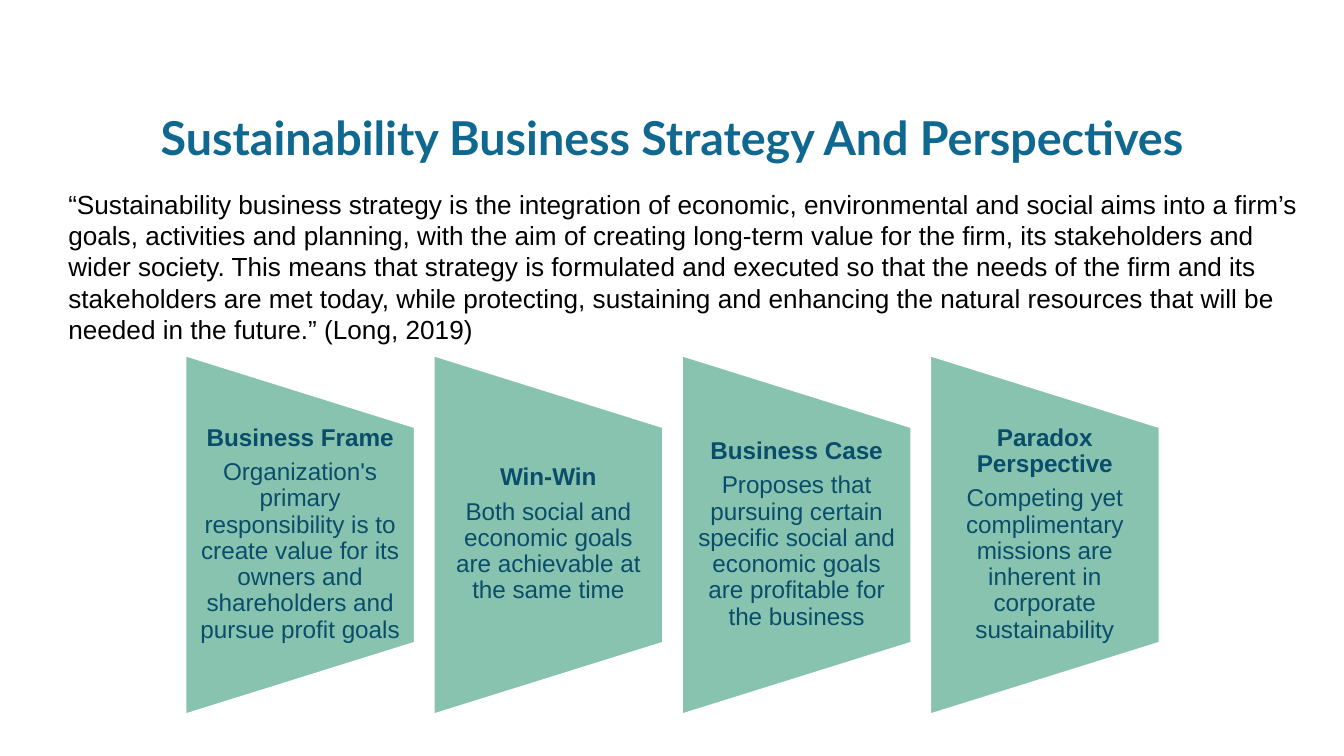
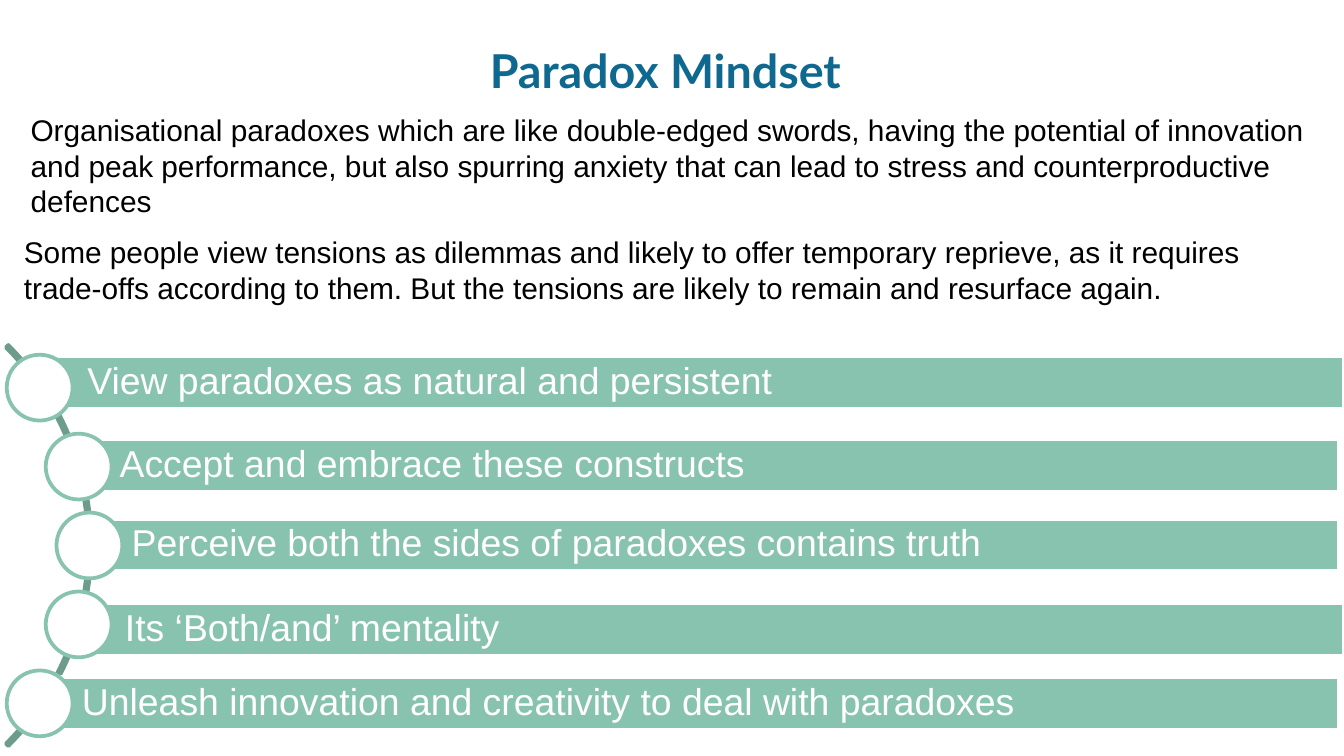
from dataclasses import dataclass
from typing import Optional

from pptx import Presentation
from pptx.dml.color import RGBColor
from pptx.enum.shapes import MSO_SHAPE
from pptx.enum.text import MSO_ANCHOR, MSO_AUTO_SIZE, PP_ALIGN
from pptx.util import Inches, Pt

RECT = MSO_SHAPE.RECTANGLE
OVAL = MSO_SHAPE.OVAL
ARC = MSO_SHAPE.BLOCK_ARC
FUNNEL = MSO_SHAPE.FLOWCHART_MANUAL_OPERATION
MIDDLE = MSO_ANCHOR.MIDDLE
TOP = MSO_ANCHOR.TOP
GROW = MSO_AUTO_SIZE.SHAPE_TO_FIT_TEXT
LEFT = PP_ALIGN.LEFT
CENTER = PP_ALIGN.CENTER

WIDTH = Inches(10)
HEIGHT = Inches(5.625)
LINE = 2

COLORS = {
    "title": "0F6890",
    "body": "000000",
    "navy": "0A4D6B",
    "mint": "88C3B0",
    "moss": "6D9C8D",
    "white": "FFFFFF",
}


@dataclass(frozen=True)
class Box:
    """Place and size in percent of the slide."""
    x: float
    y: float
    w: float
    h: float

    def place(self) -> tuple[int, int, int, int]:
        return (int(WIDTH * self.x / 100), int(HEIGHT * self.y / 100),
                int(WIDTH * self.w / 100), int(HEIGHT * self.h / 100))


@dataclass(frozen=True)
class Style:
    size: float
    color: str
    font: str = "Arial"
    align: PP_ALIGN = LEFT
    anchor: MSO_ANCHOR = TOP
    inset: tuple[float, float, float, float] = (0.1, 0.05, 0.1, 0.05)
    lead: Optional[float] = None
    after: float = 0


@dataclass(frozen=True)
class View:
    head: str
    text: str


@dataclass(frozen=True)
class Step:
    text: str
    x: float
    y: float
    right: float
    dot: float


TITLE = Style(25, "title", "Lato", CENTER, MIDDLE, (0, 0, 0, 0))
CARD = Style(13, "navy", align=CENTER, anchor=MIDDLE,
             inset=(0.09, 0, 0.09, 0), lead=0.9, after=4.5)
BAR = Style(20, "white", anchor=MIDDLE,
            inset=(0.31, 0.06, 0.06, 0.06), lead=0.9)

VIEWS = [
    View("Business Frame",
         "Organization's primary responsibility is to create value for its "
         "owners and shareholders and pursue profit goals"),
    View("Win-Win",
         "Both social and economic goals are achievable at the same time"),
    View("Business Case",
         "Proposes that pursuing certain specific social and economic goals "
         "are profitable for the business"),
    View("Paradox Perspective",
         "Competing yet complimentary missions are inherent in corporate "
         "sustainability"),
]

STEPS = [
    Step("View paradoxes as natural and persistent", 3.4, 47.11, 100, 0.5),
    Step("Accept and embrace these constructs", 5.8, 58.13, 99.6, 3.4),
    Step("Perceive both the sides of paradoxes contains truth",
         6.7, 68.62, 99.6, 4.2),
    Step("Its ‘Both/and’ mentality", 6.2, 79.82, 100, 3.4),
    Step("Unleash innovation and creativity to deal with paradoxes",
         3, 89.6, 99.6, 0.5),
]

QUOTE = (
    "“Sustainability business strategy is the integration of economic, "
    "environmental and social aims into a firm’s goals, activities and "
    "planning, with the aim of creating long-term value for the firm, its "
    "stakeholders and wider society. This means that strategy is formulated "
    "and executed so that the needs of the firm and its stakeholders are met "
    "today, while protecting, sustaining and enhancing the natural resources "
    "that will be needed in the future.” (Long, 2019)"
)
SWORDS = (
    "Organisational paradoxes which are like double-edged swords, having the "
    "potential of innovation and peak performance, but also spurring anxiety "
    "that can lead to stress and counterproductive defences"
)
TENSION = (
    "Some people view tensions as dilemmas and likely to offer temporary "
    "reprieve, as it requires trade-offs according to them. But the tensions "
    "are likely to remain and resurface again."
)


def tint(name: str) -> RGBColor:
    return RGBColor.from_string(COLORS[name])


def write(frame, lines: list[str], style: Style, bold: bool = False) -> None:
    frame.word_wrap = True
    frame.vertical_anchor = style.anchor
    (frame.margin_left, frame.margin_top,
     frame.margin_right, frame.margin_bottom) = map(Inches, style.inset)
    frame.text = "\n".join(lines)
    for index, para in enumerate(frame.paragraphs):
        para.alignment = style.align
        para.space_after = Pt(style.after)
        if style.lead:
            para.line_spacing = style.lead
        for run in para.runs:
            run.font.name = style.font
            run.font.size = Pt(style.size)
            run.font.bold = bold and index == 0
            run.font.color.rgb = tint(style.color)


def label(slide, box: Box, lines: list[str], style: Style,
          bold: bool = False):
    shape = slide.shapes.add_textbox(*box.place())
    write(shape.text_frame, lines, style, bold)
    return shape


def prose(slide, box: Box, text: str, size: float) -> None:
    shape = label(slide, box, [text], Style(size, "body"))
    shape.text_frame.auto_size = GROW


def draw(slide, kind: MSO_SHAPE, box: Box, fill: Optional[str], line: str):
    shape = slide.shapes.add_shape(kind, *box.place())
    shape.shadow.inherit = False
    if fill:
        shape.fill.solid()
        shape.fill.fore_color.rgb = tint(fill)
    else:
        shape.fill.background()
    shape.line.color.rgb = tint(line)
    shape.line.width = Pt(LINE)
    return shape


def start(deck, box: Box, title: str):
    slide = deck.slides.add_slide(deck.slide_layouts[6])
    slide.background.fill.solid()
    slide.background.fill.fore_color.rgb = tint("white")
    label(slide, box, [title], TITLE, bold=True)
    return slide


def add_views(deck) -> None:
    slide = start(deck, Box(10.8, 13.69, 78.4, 8.89),
                  "Sustainability Business Strategy And Perspectives")
    prose(slide, Box(4.1, 24, 94, 22.76), QUOTE, 14)
    pitch = 18.47
    for index, view in enumerate(VIEWS):
        shift = index * pitch
        panel = draw(slide, FUNNEL, Box(8.88 + shift, 55.47, 26.9, 30.58),
                     "mint", "white")
        panel.rotation = 270
        label(slide, Box(13.72 + shift, 56.36, 17.2, 28.62),
              [view.head, view.text], CARD, bold=True)


def add_mindset(deck) -> None:
    slide = start(deck, Box(7.8, 4.8, 83.4, 8.89), "Paradox Mindset")
    curve = draw(slide, ARC, Box(-35.4, 34.67, 42.2, 75.02), None, "moss")
    for index, value in enumerate((189, 27, 0.006)):
        curve.adjustments[index] = value
    top, pitch = 46.93, 10.44
    for index, step in enumerate(STEPS):
        bar = draw(slide, RECT,
                   Box(step.x, step.y, step.right - step.x, 6.93),
                   "mint", "white")
        write(bar.text_frame, [step.text], BAR)
        draw(slide, OVAL, Box(step.dot, top + index * pitch, 4.9, 8.71),
             "white", "mint")
    prose(slide, Box(1.3, 13.87, 97.3, 16.18), SWORDS, 16)
    prose(slide, Box(0.8, 30.04, 97.3, 11.38), TENSION, 16)


def main() -> None:
    deck = Presentation()
    deck.slide_width = WIDTH
    deck.slide_height = HEIGHT
    add_views(deck)
    add_mindset(deck)
    deck.save("out.pptx")


if __name__ == "__main__":
    main()
